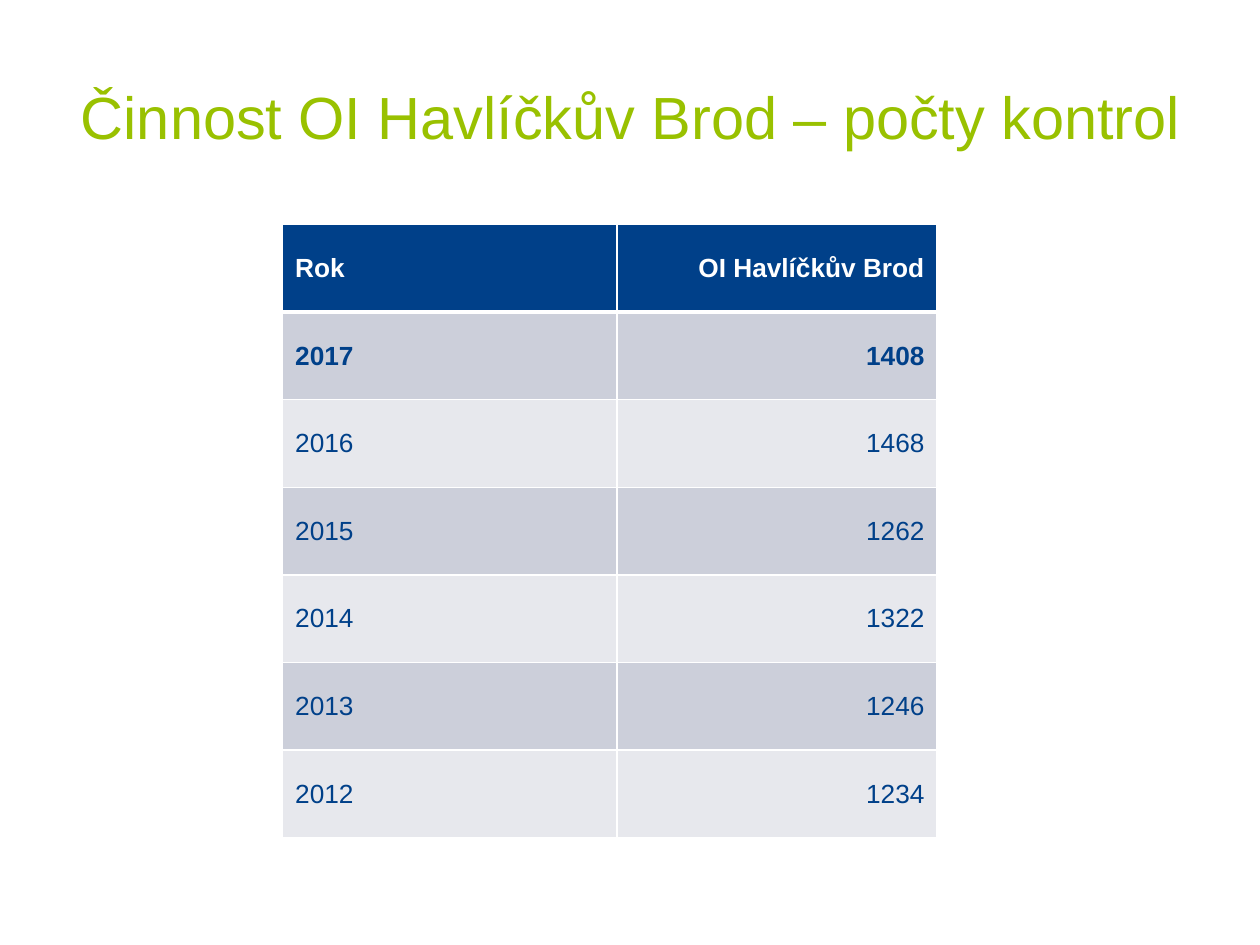
from dataclasses import dataclass

from lxml import etree
from pptx import Presentation
from pptx.dml.color import RGBColor
from pptx.enum import text
from pptx.oxml import ns
from pptx.util import Pt


@dataclass(frozen=True)
class Theme:
    font: str = "Arial"
    title: int = 34
    body: int = 15
    green: str = "99C100"
    blue: str = "004089"
    white: str = "FFFFFF"
    bands: tuple = ("CCCFDA", "E7E8ED")


THEME = Theme()
TITLE = "Činnost OI Havlíčkův Brod – počty kontrol"
ROWS = [
    ("Rok", "OI Havlíčkův Brod"),
    ("2017", "1408"),
    ("2016", "1468"),
    ("2015", "1262"),
    ("2014", "1322"),
    ("2013", "1246"),
    ("2012", "1234"),
]


def style(para, size, color, align, bold=False):
    para.alignment = align
    font = para.font
    font.name, font.size, font.bold = THEME.font, Pt(size), bold
    font.color.rgb = RGBColor.from_string(color)


def edge(cell, side, width):
    """Draw a white border on one side: L, R, T or B, in that order."""
    props = cell._tc.get_or_add_tcPr()
    line = etree.SubElement(props, ns.qn("a:ln" + side), w=str(Pt(width)))
    fill = etree.SubElement(line, ns.qn("a:solidFill"))
    etree.SubElement(fill, ns.qn("a:srgbClr"), val=THEME.white)


def add_title(slide, left, top, width, height):
    box = slide.shapes.add_textbox(Pt(left), Pt(top), Pt(width), Pt(height))
    frame = box.text_frame
    frame.word_wrap = True
    frame.vertical_anchor = text.MSO_ANCHOR.MIDDLE
    frame.text = TITLE
    style(frame.paragraphs[0], THEME.title, THEME.green, text.PP_ALIGN.CENTER)


def fill_cell(cell, value, row, col):
    head = row == 0
    for side in "LRTB":
        thick = (head and side == "B") or (row == 1 and side == "T")
        edge(cell, side, 3 if thick else 1)
    shade = THEME.blue if head else THEME.bands[(row - 1) % 2]
    cell.fill.solid()
    cell.fill.fore_color.rgb = RGBColor.from_string(shade)
    cell.vertical_anchor = text.MSO_ANCHOR.MIDDLE
    cell.text = value
    style(
        cell.text_frame.paragraphs[0],
        THEME.body,
        THEME.white if head else THEME.blue,
        text.PP_ALIGN.RIGHT if col else text.PP_ALIGN.LEFT,
        bold=row < 2,
    )


def add_counts(slide, left, top, width, height):
    """Place the table of yearly inspection counts."""
    table = slide.shapes.add_table(
        len(ROWS), 2, Pt(left), Pt(top), Pt(width), Pt(height)
    ).table
    first = round(width * 0.51)
    table.columns[0].width = Pt(first)
    table.columns[1].width = Pt(width - first)
    for row, values in enumerate(ROWS):
        table.rows[row].height = Pt(height / len(ROWS))
        for col, value in enumerate(values):
            fill_cell(table.cell(row, col), value, row, col)


def main():
    deck = Presentation()
    deck.slide_width, deck.slide_height = Pt(720), Pt(540)
    slide = deck.slides.add_slide(deck.slide_layouts[6])
    add_title(slide, 36.5, 21, 648, 90)
    add_counts(slide, 161.5, 128.3, 374, 350.5)
    deck.save("out.pptx")


if __name__ == "__main__":
    main()
